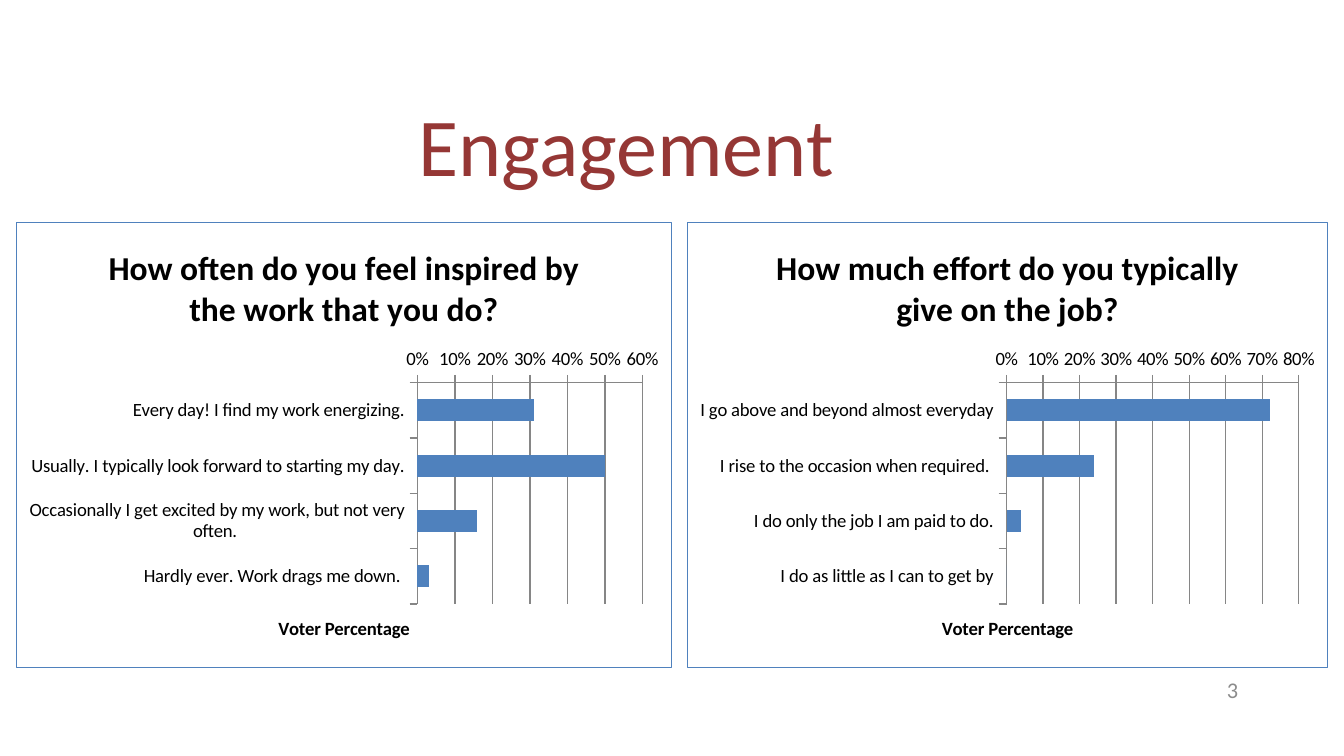
import pptx
import pptx.chart.data
import pptx.dml.color
import pptx.enum.chart
import pptx.enum.text
import pptx.oxml
import pptx.oxml.ns
import pptx.util

Cm = pptx.util.Cm
Pt = pptx.util.Pt
RGBColor = pptx.dml.color.RGBColor
ALIGN = pptx.enum.text.PP_ALIGN
TICK = pptx.enum.chart.XL_TICK_MARK

FONT = "Calibri"
RED = RGBColor(0x95, 0x37, 0x35)
BLUE = RGBColor(0x4F, 0x81, 0xBD)
GRAY = RGBColor(0x8C, 0x8C, 0x8C)
AXIS_GRAY = RGBColor(0x86, 0x86, 0x86)
BLACK = RGBColor(0, 0, 0)

HEADING = "Engagement"
PAGE_NUMBER = "3"
AXIS_TITLE = "Voter Percentage"
QUESTIONS = [
    {
        "title": "How often do you feel inspired by the work that you do?",
        "left": 0.3, "width": 12.4, "maximum": 0.6,
        "answers": [
            ("Every day! I find my work energizing.", 0.31),
            ("Usually. I typically look forward to starting my day.", 0.5),
            ("Occasionally I get excited by my work, but not very often. ", 0.16),
            ("Hardly ever. Work drags me down. ", 0.03),
        ],
    },
    {
        "title": "How much effort do you typically give on the job?",
        "left": 12.98, "width": 12.12, "maximum": 0.8,
        "answers": [
            ("I go above and beyond almost everyday", 0.72),
            ("I rise to the occasion when required. ", 0.24),
            ("I do only the job I am paid to do.", 0.04),
            ("I do as little as I can to get by", 0),
        ],
    },
]
CHART_TOP, CHART_HEIGHT = 4.19, 8.43


def style_font(font, size, color, bold=False):
    font.name = FONT
    font.size = Pt(size)
    font.bold = bold
    font.color.rgb = color


def add_text(slide, text, box, *, size, color, align, spacing=1.0):
    frame = slide.shapes.add_textbox(*map(Cm, box)).text_frame
    frame.word_wrap = True
    frame.vertical_anchor = pptx.enum.text.MSO_ANCHOR.MIDDLE
    paragraph = frame.paragraphs[0]
    paragraph.alignment = align
    paragraph.line_spacing = spacing
    run = paragraph.add_run()
    run.text = text
    style_font(run.font, size, color)


def set_title(owner, text, size):
    """Give a chart or an axis a bold black title."""
    owner.has_title = True
    frame = (owner.chart_title if hasattr(owner, "chart_title") else owner.axis_title).text_frame
    frame.text = text
    style_font(frame.paragraphs[0].runs[0].font, size, BLACK, bold=True)


def outline_chart(chart, color, points):
    """Draw a border around the whole chart area."""
    border = pptx.oxml.parse_xml(
        f'<c:spPr {pptx.oxml.ns.nsdecls("c", "a")}><a:noFill/>'
        f'<a:ln w="{Pt(points)}"><a:solidFill><a:srgbClr val="{color}"/>'
        "</a:solidFill></a:ln></c:spPr>"
    )
    chart.element.find(pptx.oxml.ns.qn("c:chart")).addnext(border)


def add_question(slide, question):
    labels, shares = zip(*question["answers"])
    chart_data = pptx.chart.data.CategoryChartData(number_format="0%")
    chart_data.categories = labels
    chart_data.add_series("Series 1", shares)
    chart = slide.shapes.add_chart(
        pptx.enum.chart.XL_CHART_TYPE.BAR_CLUSTERED,
        Cm(question["left"]), Cm(CHART_TOP),
        Cm(question["width"]), Cm(CHART_HEIGHT), chart_data,
    ).chart
    style_font(chart.font, 10, BLACK)
    outline_chart(chart, BLUE, 0.75)
    chart.has_legend = False
    set_title(chart, question["title"], 18)

    plot = chart.plots[0]
    plot.gap_width = 150
    plot.vary_by_categories = False
    bars = plot.series[0].format.fill
    bars.solid()
    bars.fore_color.rgb = BLUE

    answers, percent = chart.category_axis, chart.value_axis
    answers.reverse_order = True
    answers.has_major_gridlines = False
    percent.has_major_gridlines = True
    percent.minimum_scale = 0
    percent.maximum_scale = question["maximum"]
    percent.major_unit = 0.1
    percent.tick_labels.number_format = "0%"
    percent.tick_labels.number_format_is_linked = False
    set_title(percent, AXIS_TITLE, 10)
    for axis in (answers, percent):
        axis.major_tick_mark = TICK.OUTSIDE
        axis.minor_tick_mark = TICK.NONE
    for part in (answers, percent, percent.major_gridlines):
        part.format.line.color.rgb = AXIS_GRAY
        part.format.line.width = Pt(0.75)


def main():
    deck = pptx.Presentation()
    deck.slide_width, deck.slide_height = Cm(25.4), Cm(14.28)
    slide = deck.slides.add_slide(deck.slide_layouts[6])
    add_text(slide, HEADING, (0.89, 1.45, 21.9, 2.77),
             size=44, color=RED, align=ALIGN.CENTER, spacing=0.9)
    for question in QUESTIONS:
        add_question(slide, question)
    add_text(slide, PAGE_NUMBER, (17.93, 12.65, 5.72, 0.76),
             size=12, color=GRAY, align=ALIGN.RIGHT)
    deck.save("out.pptx")


if __name__ == "__main__":
    main()
